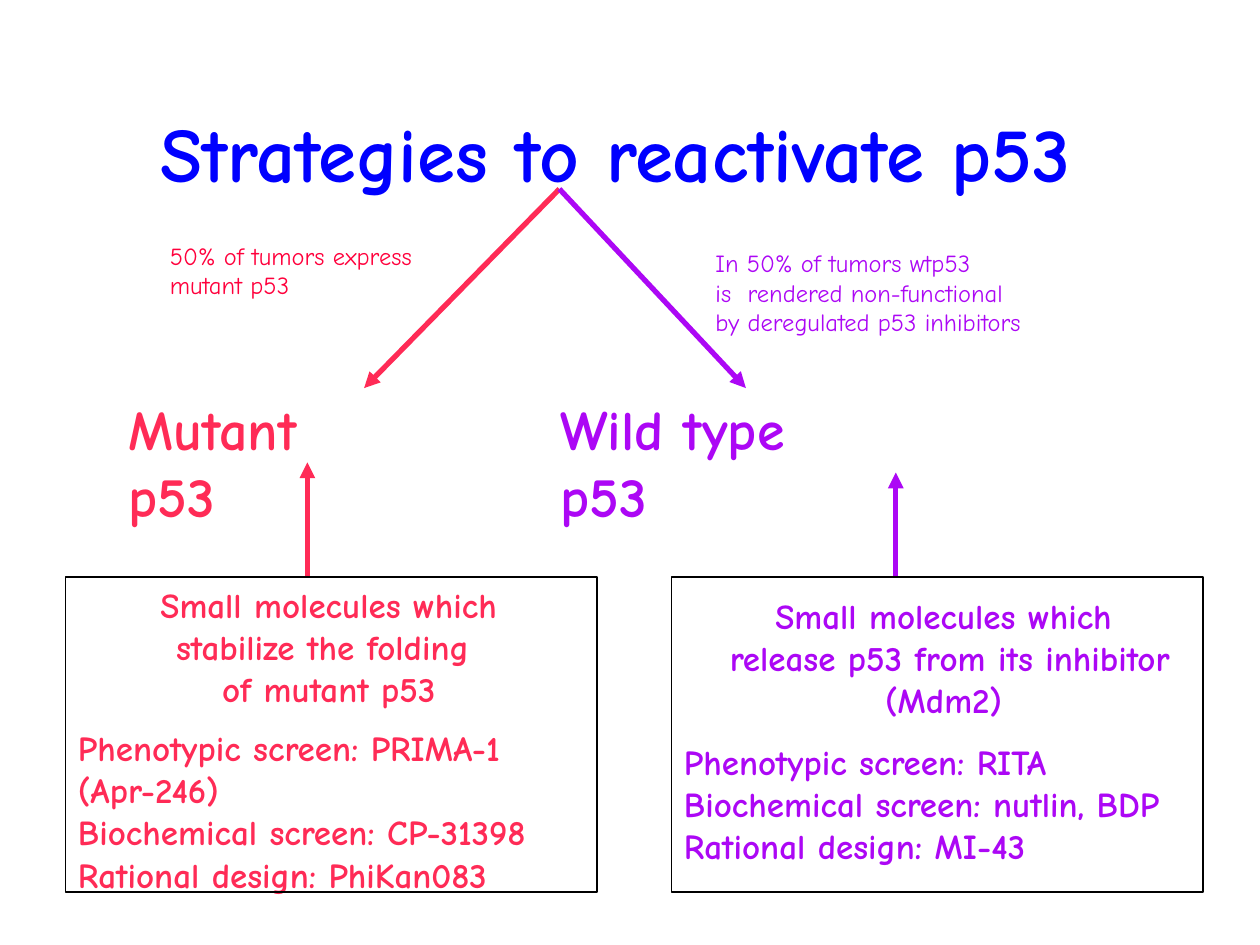
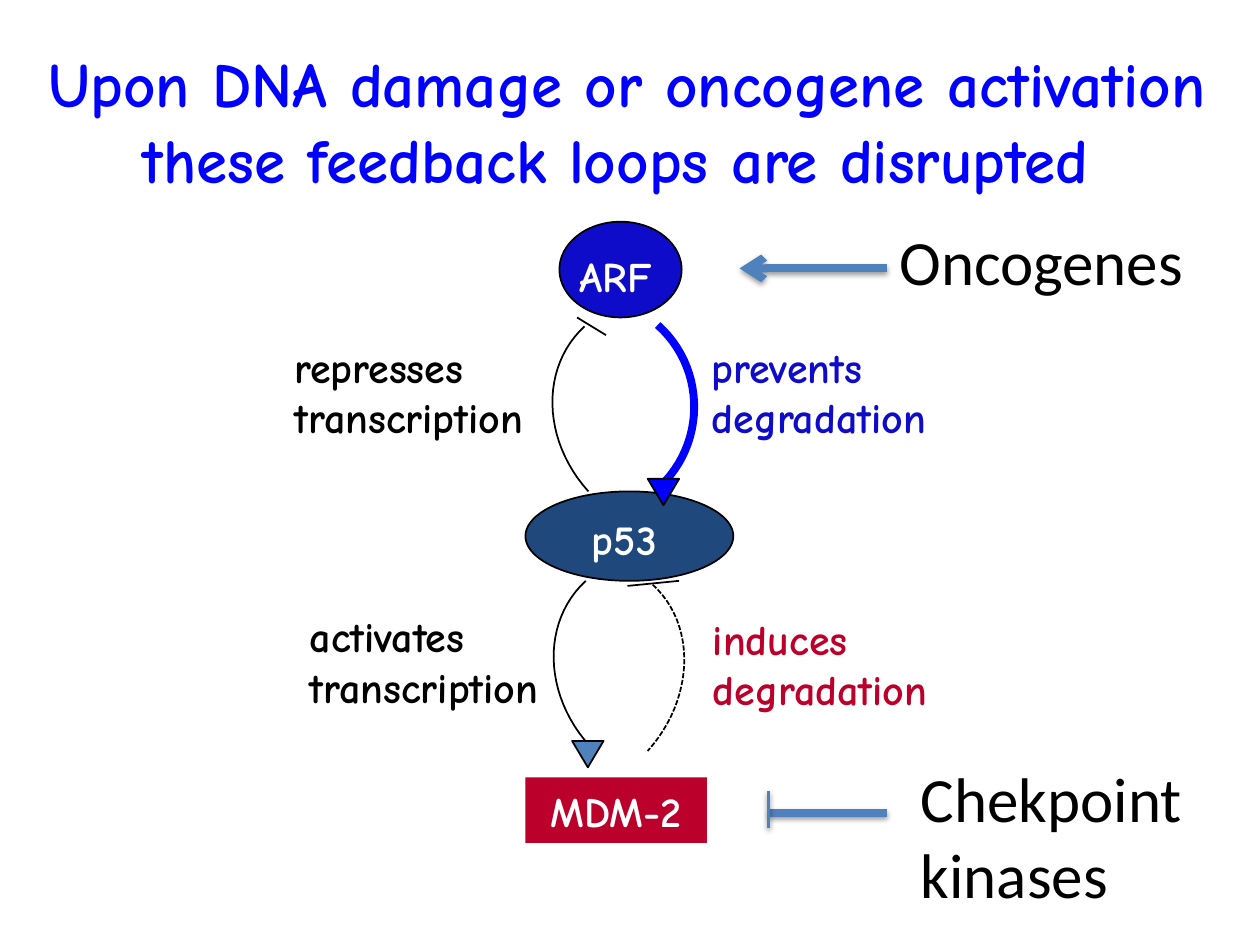
from lxml import etree
from pptx import Presentation
from pptx.dml.color import RGBColor
from pptx.enum.dml import MSO_LINE
from pptx.enum.shapes import MSO_CONNECTOR, MSO_SHAPE
from pptx.enum.text import MSO_ANCHOR, MSO_AUTO_SIZE, PP_ALIGN
from pptx.oxml.ns import qn
from pptx.util import Inches, Pt

# Shared style
COMIC, CALIBRI = "Comic Neue", "Calibri"
BLUE, PINK, RED, PURPLE = "0000FF", "FF2B56", "FF003C", "AC07F5"
NAVY, ROYAL, CRIMSON, STEEL = "1F497D", "0E0BC9", "BC002C", "4F81BD"
BLACK, WHITE = "000000", "FFFFFF"
LEFT, CENTER = PP_ALIGN.LEFT, PP_ALIGN.CENTER

# Slide 1: one entry per strategy
FORK = (4.44, 1.5)
BOX_TOP, BOX_WIDTH, BOX_HEIGHT = 4.58, 4.22, 2.5
STRATEGIES = [
    {
        "color": PINK, "box_left": 0.52, "branch_end": (2.89, 3.08),
        "name": ("Mutant p53", (0.92, 3.08, 2.37, 0.66)),
        "note": ("50% of tumors express\nmutant p53", (1.25, 1.86, 2.27, 0.59), RED),
        "heading": ("Small molecules which\nstabilize the folding \nof mutant p53",
                    (1.08, 4.58, 3.06, 1.15)),
        "screens": ("Phenotypic screen: PRIMA-1\n(Apr-246)\n"
                    "Biochemical screen: CP-31398\nRational design: PhiKan083",
                    (0.52, 5.72, 4.21, 1.45)),
        "arrow": (2.44, 3.67),
    },
    {
        "color": PURPLE, "box_left": 5.33, "branch_end": (5.92, 3.08),
        "name": ("Wild type p53", (4.35, 3.08, 2.82, 0.66)),
        "note": ("In 50% of tumors wtp53\nis  rendered non-functional\n"
                 "by deregulated p53 inhibitors", (5.58, 1.92, 2.92, 0.84), PURPLE),
        "heading": ("Small molecules which\n release p53 from its inhibitor\n(Mdm2)",
                    (5.42, 4.67, 4.14, 1.15)),
        "screens": ("Phenotypic screen: RITA\nBiochemical screen: nutlin, BDP\n"
                    "Rational design: MI-43", (5.33, 5.83, 4.13, 1.12)),
        "arrow": (7.11, 3.75),
    },
]

# Slide 2: feedback loops
NODES = [  # text, preset, place, fill, outline, text nudge (right, top)
    ("p53", MSO_SHAPE.OVAL, (4.17, 3.9, 1.65, 0.71), NAVY, BLACK, (0.08, 0.04)),
    ("MDM-2", MSO_SHAPE.RECTANGLE, (4.17, 6.17, 1.44, 0.52), CRIMSON, None, (0, 0)),
    ("ARF", MSO_SHAPE.OVAL, (4.44, 1.76, 0.97, 0.76), ROYAL, BLACK, (0.08, 0.1)),
]
ARCS = [  # four Bezier points, colour, width, dash
    ([(4.68, 5.92), (4.31, 5.51), (4.3, 4.93), (4.65, 4.61)], BLACK, 1, None),
    ([(5.22, 2.58), (5.58, 2.9), (5.61, 3.46), (5.28, 3.82)], BLUE, 4.5, None),
    ([(5.18, 4.64), (5.53, 4.96), (5.51, 5.55), (5.14, 5.96)], BLACK, 1,
     MSO_LINE.SQUARE_DOT),
    ([(4.67, 3.9), (4.3, 3.49), (4.29, 2.91), (4.64, 2.59)], BLACK, 1, None),
]
ARC_STEPS = 24
ARROWHEADS = [((4.54, 5.88, 0.25, 0.21), STEEL), ((5.14, 3.8, 0.25, 0.21), BLUE)]
INHIBITION_BARS = [((4.98, 4.65), (5.39, 4.61)), ((4.58, 2.52), (4.81, 2.66))]
LABELS = [
    ("prevents\ndegradation", (5.55, 2.66, 1.98, 0.94), ROYAL),
    ("represses\ntranscription", (2.24, 2.66, 2.15, 0.94), BLACK),
    ("induces\ndegradation", (5.56, 4.82, 1.98, 0.94), CRIMSON),
    ("activates\ntranscription", (2.36, 4.8, 2.15, 0.94), BLACK),
]
SIGNALS = [
    ("Oncogenes", (7.04, 1.72, 2.48, 0.71)),
    ("Chekpoint\nkinases", (7.21, 5.98, 2.3, 1.31)),
]
SIGNAL_LINES = [  # start, end, width, arrowhead
    ((7.04, 2.13), (5.87, 2.13), 4.5, "arrow"),
    ((6.1, 6.45), (7.04, 6.45), 4.5, None),
    ((6.1, 6.28), (6.1, 6.57), 2, None),
]


def rgb(color):
    return RGBColor.from_string(color)


def inches(values):
    return [Inches(value) for value in values]


def write(text_frame, text, size, color, bold=True, font=COMIC, align=LEFT):
    text_frame.text = text
    style = {"name": font, "size": Pt(size), "bold": bold}
    for paragraph in text_frame.paragraphs:
        paragraph.alignment = align
        for run in paragraph.runs:
            for name, value in style.items():
                setattr(run.font, name, value)
            run.font.color.rgb = rgb(color)


def add_text(slide, text, place, size, color, **style):
    text_frame = slide.shapes.add_textbox(*inches(place)).text_frame
    text_frame.word_wrap = False
    text_frame.auto_size = MSO_AUTO_SIZE.SHAPE_TO_FIT_TEXT
    write(text_frame, text, size, color, **style)


def add_title_slide(presentation, text, place, size):
    slide = presentation.slides.add_slide(presentation.slide_layouts[5])
    title = slide.shapes.title
    title.left, title.top, title.width, title.height = inches(place)
    title.text_frame.auto_size = MSO_AUTO_SIZE.NONE
    title.text_frame.vertical_anchor = MSO_ANCHOR.MIDDLE
    write(title.text_frame, text, size, BLUE, align=CENTER)
    return slide


def format_shape(shape, fill=None, line=None, width=1.0):
    shape.shadow.inherit = False
    for part, color in ((shape.fill, fill), (shape.line.fill, line)):
        if color:
            part.solid()
            part.fore_color.rgb = rgb(color)
        else:
            part.background()
    if line:
        shape.line.width = Pt(width)


def add_shape(slide, preset, place, fill=None, line=BLACK):
    shape = slide.shapes.add_shape(preset, *inches(place))
    format_shape(shape, fill, line)
    return shape


def add_line(slide, start, end, color, width, head=None, shadow=False):
    connector = slide.shapes.add_connector(
        MSO_CONNECTOR.STRAIGHT, *inches(start + end))
    connector.line.color.rgb = rgb(color)
    connector.line.width = Pt(width)
    if head:
        etree.SubElement(connector.line._get_or_add_ln(), qn("a:tailEnd"), type=head)
    effects = etree.SubElement(connector._element.spPr, qn("a:effectLst"))
    if shadow:
        outer = etree.SubElement(
            effects, qn("a:outerShdw"), blurRad=str(Pt(3.1)), dist=str(Pt(1.6)),
            dir="5400000", rotWithShape="0")
        shade = etree.SubElement(outer, qn("a:srgbClr"), val=BLACK)
        etree.SubElement(shade, qn("a:alpha"), val="38000")


def bezier_point(controls, t):
    weights = ((1 - t) ** 3, 3 * t * (1 - t) ** 2, 3 * t * t * (1 - t), t ** 3)
    return tuple(Inches(sum(weight * value for weight, value in zip(weights, axis)))
                 for axis in zip(*controls))


def add_arc(slide, controls, color, width, dash):
    points = [bezier_point(controls, step / ARC_STEPS) for step in range(ARC_STEPS + 1)]
    builder = slide.shapes.build_freeform(*points[0])
    builder.add_line_segments(points[1:], close=False)
    arc = builder.convert_to_shape()
    format_shape(arc, line=color, width=width)
    if dash:
        arc.line.dash_style = dash


def build_strategies(presentation):
    slide = add_title_slide(
        presentation, "Strategies to reactivate p53 ", (0.44, 0.58, 9.11, 1.25), 44)
    for strategy in STRATEGIES:
        color = strategy["color"]
        # Branch from the title
        add_line(slide, FORK, strategy["branch_end"], color, 3, "triangle")
        note, note_place, note_color = strategy["note"]
        add_text(slide, note, note_place, 14, note_color, bold=False)
        add_text(slide, *strategy["name"], 32, color)
        # Boxed molecules pointing up at the branch
        add_text(slide, *strategy["heading"], 20, color, align=CENTER)
        add_text(slide, *strategy["screens"], 20, color)
        arrow_x, arrow_top = strategy["arrow"]
        add_line(slide, (arrow_x, BOX_TOP), (arrow_x, arrow_top), color, 3, "triangle")
        add_shape(slide, MSO_SHAPE.RECTANGLE,
                  (strategy["box_left"], BOX_TOP, BOX_WIDTH, BOX_HEIGHT))


def build_feedback_loops(presentation):
    slide = add_title_slide(
        presentation,
        "Upon DNA damage or oncogene activation these feedback loops are disrupted ",
        (-0.19, 0.33, 10.33, 1.25), 36)
    # Proteins
    for text, preset, place, fill, outline, (right, top) in NODES:
        text_frame = add_shape(slide, preset, place, fill, outline).text_frame
        margins = {"left": 0, "right": right, "top": top, "bottom": 0}
        for side, margin in margins.items():
            setattr(text_frame, f"margin_{side}", Inches(margin))
        text_frame.word_wrap = False
        text_frame.vertical_anchor = MSO_ANCHOR.MIDDLE
        write(text_frame, text, 24, WHITE, align=CENTER)
    # Loops and their ends
    for arc in ARCS:
        add_arc(slide, *arc)
    for place, fill in ARROWHEADS:
        add_shape(slide, MSO_SHAPE.ISOSCELES_TRIANGLE, place, fill).rotation = 180
    for start, end in INHIBITION_BARS:
        add_line(slide, start, end, BLACK, 1)
    for text, place, color in LABELS:
        add_text(slide, text, place, 24, color)
    # Outside signals
    for start, end, width, head in SIGNAL_LINES:
        add_line(slide, start, end, STEEL, width, head, shadow=True)
    for text, place in SIGNALS:
        add_text(slide, text, place, 36, BLACK, bold=False, font=CALIBRI)


def main():
    presentation = Presentation()
    presentation.slide_width, presentation.slide_height = inches((10, 7.5))
    build_strategies(presentation)
    build_feedback_loops(presentation)
    presentation.save("out.pptx")


if __name__ == "__main__":
    main()
